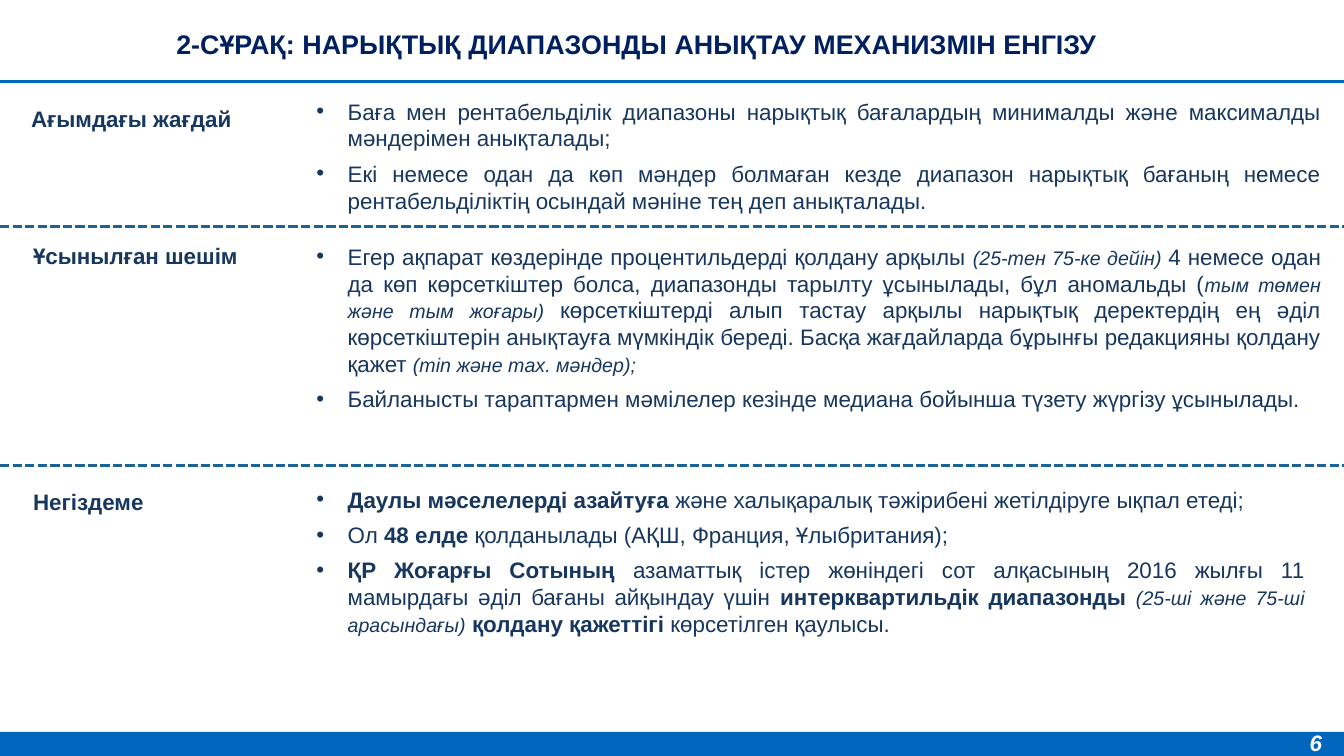
from dataclasses import dataclass

from lxml.etree import SubElement
from pptx import Presentation
from pptx.dml.color import RGBColor
from pptx.enum.dml import MSO_LINE_DASH_STYLE as Dash
from pptx.enum.shapes import MSO_CONNECTOR_TYPE as Connector, MSO_SHAPE as Shape
from pptx.enum.text import MSO_ANCHOR as Anchor, PP_ALIGN as Align
from pptx.oxml.ns import qn
from pptx.util import Inches, Pt


@dataclass(frozen=True)
class Theme:
    font: str = "Arial"
    accent: RGBColor = RGBColor(0x00, 0x65, 0xBD)
    divider: RGBColor = RGBColor(0x1D, 0x62, 0x94)
    title: RGBColor = RGBColor(0x00, 0x20, 0x60)
    text: RGBColor = RGBColor(0x17, 0x37, 0x5E)
    white: RGBColor = RGBColor(0xFF, 0xFF, 0xFF)
    title_size: Pt = Pt(24)
    body_size: Pt = Pt(16)
    note_size: Pt = Pt(14)
    line_width: Pt = Pt(2.25)
    bullet_gap: Pt = Pt(6)


THEME = Theme()
SLIDE_WIDTH, SLIDE_HEIGHT = 13.33, 7.5
PLAIN, BOLD, NOTE = "plain", "bold", "note"

# Each section: label, label box, bullet box, and bullets as styled runs.
SECTIONS = [
    ("Ағымдағы жағдай", (0.21, 0.99, 2.67, 0.37), (3.04, 0.92, 10.16, 1.26), [
        [("Баға мен рентабельділік диапазоны нарықтық бағалардың минималды және "
          "максималды мәндерімен анықталады;", PLAIN)],
        [("Екі немесе одан да көп мәндер болмаған кезде диапазон нарықтық бағаның "
          "немесе рентабельділіктің осындай мәніне тең деп анықталады.", PLAIN)],
    ]),
    ("Ұсынылған шешім", (0.23, 2.35, 2.67, 0.37), (3.04, 2.36, 10.16, 1.8), [
        [("Егер ақпарат көздерінде процентильдерді қолдану арқылы ", PLAIN),
         ("(25-тен 75-ке дейін) ", NOTE),
         ("4 немесе одан да көп көрсеткіштер болса, диапазонды тарылту ұсынылады, "
          "бұл аномальды (", PLAIN),
         ("тым төмен және тым жоғары) ", NOTE),
         ("көрсеткіштерді алып тастау арқылы нарықтық деректердің ең әділ "
          "көрсеткіштерін анықтауға мүмкіндік береді. Басқа жағдайларда бұрынғы "
          "редакцияны қолдану қажет ", PLAIN),
         ("(min және max. мәндер);", NOTE)],
        [("Байланысты тараптармен мәмілелер кезінде медиана бойынша түзету жүргізу "
          "ұсынылады.", PLAIN)],
    ]),
    ("Негіздеме", (0.23, 4.79, 1.96, 0.37), (3.04, 4.77, 10, 1.62), [
        [("Даулы мәселелерді азайтуға ", BOLD),
         ("және халықаралық тәжірибені жетілдіруге ықпал етеді;", PLAIN)],
        [("Ол ", PLAIN), ("48 елде ", BOLD),
         ("қолданылады (АҚШ, Франция, Ұлыбритания);", PLAIN)],
        [("ҚР Жоғарғы Сотының ", BOLD),
         ("азаматтық істер жөніндегі сот алқасының 2016 жылғы 11 мамырдағы әділ "
          "бағаны айқындау үшін ", PLAIN),
         ("интерквартильдік диапазонды ", BOLD),
         ("(25-ші және 75-ші арасындағы)", NOTE),
         (" қолдану қажеттігі ", BOLD),
         ("көрсетілген қаулысы.", PLAIN)],
    ]),
]


def add_text_frame(slide, box):
    text_frame = slide.shapes.add_textbox(*map(Inches, box)).text_frame
    text_frame.word_wrap = True
    return text_frame


def format_run(run, size, color, bold=False, italic=False):
    font = run.font
    font.name = THEME.font
    font.size = size
    font.color.rgb = color
    font.bold = bold
    font.italic = italic


def add_bold_text(slide, box, text, color=THEME.text, size=THEME.body_size, italic=False):
    text_frame = add_text_frame(slide, box)
    text_frame.text = text
    format_run(text_frame.paragraphs[0].runs[0], size, color, bold=True, italic=italic)
    return text_frame


def add_title(slide, text):
    text_frame = add_bold_text(slide, (0.13, 0.01, 12.36, 0.79), text,
                               THEME.title, THEME.title_size)
    text_frame.vertical_anchor = Anchor.MIDDLE
    paragraph = text_frame.paragraphs[0]
    paragraph.alignment = Align.CENTER
    paragraph.runs[0].font._element.set("cap", "small")


def set_bullet(paragraph):
    properties = paragraph._p.get_or_add_pPr()
    indent = Inches(0.31)
    properties.set("marL", str(indent))
    properties.set("indent", str(-indent))
    SubElement(properties, qn("a:buFont")).set("typeface", THEME.font)
    SubElement(properties, qn("a:buChar")).set("char", "•")


def add_bullets(slide, box, bullets):
    text_frame = add_text_frame(slide, box)
    for index, runs in enumerate(bullets):
        paragraph = text_frame.add_paragraph() if index else text_frame.paragraphs[0]
        paragraph.alignment = Align.JUSTIFY
        paragraph.space_before = THEME.bullet_gap
        set_bullet(paragraph)
        for text, style in runs:
            run = paragraph.add_run()
            run.text = text
            size = THEME.note_size if style == NOTE else THEME.body_size
            format_run(run, size, THEME.text, style == BOLD, style == NOTE)


def add_rule(slide, top, color, dash=None):
    """Draw a horizontal line across the whole slide."""
    rule = slide.shapes.add_connector(Connector.STRAIGHT, Inches(0), Inches(top),
                                      Inches(SLIDE_WIDTH), Inches(top))
    rule.line.color.rgb = color
    rule.line.width = THEME.line_width
    if dash:
        rule.line.dash_style = dash
    SubElement(rule._element.spPr, qn("a:effectLst"))


def add_footer(slide, number):
    height = 0.24
    bar = slide.shapes.add_shape(Shape.RECTANGLE, Inches(0), Inches(SLIDE_HEIGHT - height),
                                 Inches(SLIDE_WIDTH), Inches(height))
    bar.shadow.inherit = False
    bar.fill.solid()
    bar.fill.fore_color.rgb = THEME.accent
    bar.line.fill.background()
    add_bold_text(slide, (12.89, 7.18, 0.44, 0.32), number, THEME.white, italic=True)


def main():
    presentation = Presentation()
    presentation.slide_width = Inches(SLIDE_WIDTH)
    presentation.slide_height = Inches(SLIDE_HEIGHT)
    slide = presentation.slides.add_slide(presentation.slide_layouts[6])

    add_footer(slide, "6")
    add_rule(slide, 0.81, THEME.accent)
    add_title(slide, "2-сұрақ: нарықтық диапазонды анықтау механизмін енгізу")
    for label, label_box, bullet_box, bullets in SECTIONS:
        add_bold_text(slide, label_box, label)
        add_bullets(slide, bullet_box, bullets)
    for top in (2.25, 4.62):
        add_rule(slide, top, THEME.divider, Dash.SQUARE_DOT)

    presentation.save("out.pptx")


if __name__ == "__main__":
    main()
